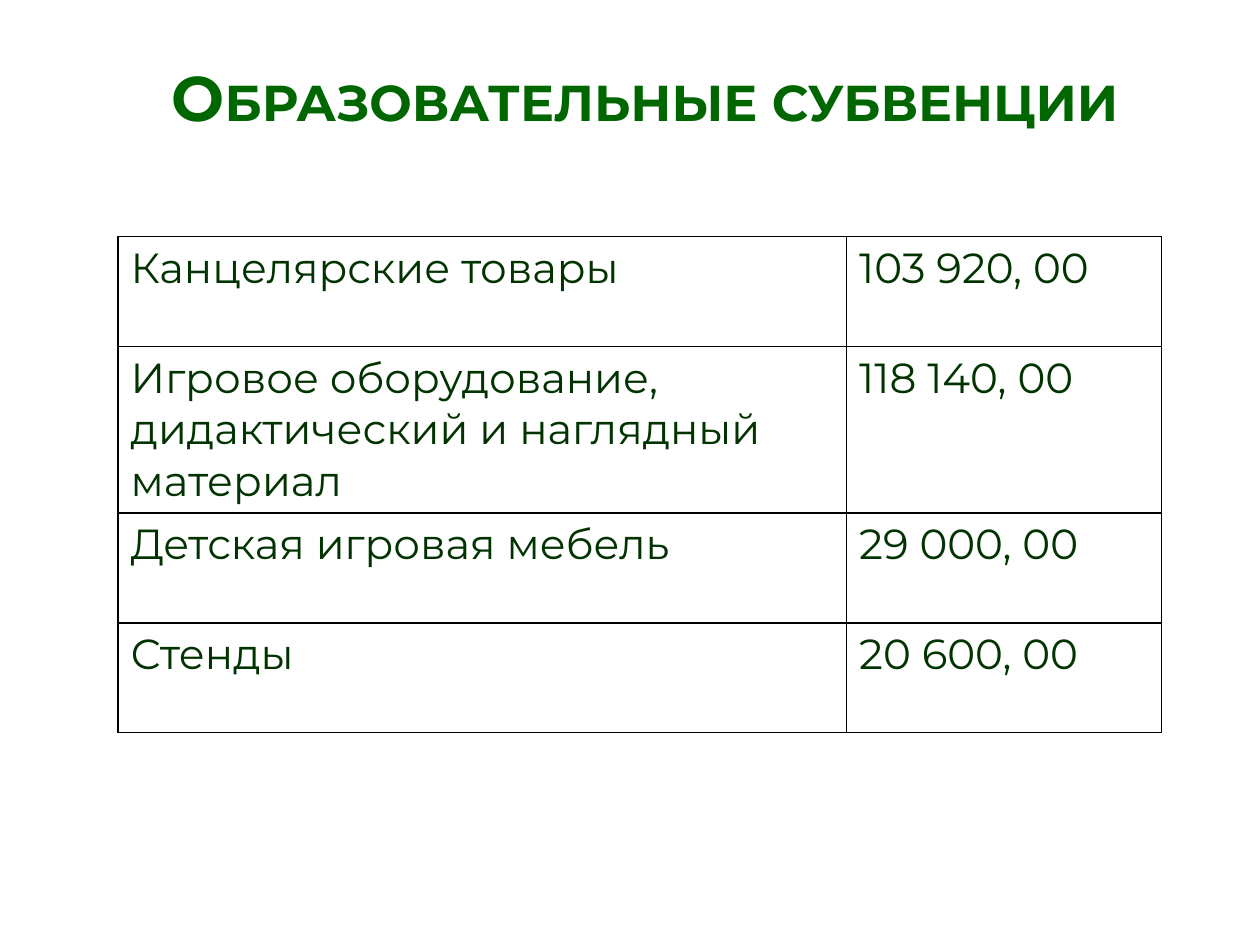
from dataclasses import dataclass

from lxml.etree import SubElement
from pptx import Presentation
from pptx.dml.color import RGBColor
from pptx.enum.text import MSO_ANCHOR as Anchor, MSO_AUTO_SIZE as AutoSize, PP_ALIGN as Align
from pptx.oxml.ns import qn
from pptx.slide import Slide
from pptx.table import _Cell as Cell
from pptx.text.text import TextFrame
from pptx.util import Pt


@dataclass(frozen=True)
class Theme:
    font: str = "Montserrat"
    title_color: str = "006600"
    text_color: str = "003300"
    border_color: str = "000000"
    title_size: float = 36
    text_size: float = 24
    border_width: float = 1


@dataclass(frozen=True)
class Expense:
    name: str
    amount: str
    height: float = 62.8


THEME = Theme()
COLUMN_WIDTHS = (416.3, 180)
EXPENSES = (
    Expense("Канцелярские товары", "103 920, 00"),
    Expense("Игровое оборудование, дидактический и наглядный материал", "118 140, 00", 93.6),
    Expense("Детская игровая мебель", "29 000, 00"),
    Expense("Стенды", "20 600, 00"),
)


def write_text(frame: TextFrame, text: str, *, size: float, color: str, bold: bool = False,
               small_caps: bool = False, align: Align = Align.LEFT) -> None:
    frame.word_wrap = True
    para = frame.paragraphs[0]
    para.alignment = align
    span = para.add_run()
    span.text = text
    span.font.name = THEME.font
    span.font.size = Pt(size)
    span.font.bold = bold
    span.font.color.rgb = RGBColor.from_string(color)
    if small_caps:
        span._r.get_or_add_rPr().set("cap", "small")


def draw_borders(cell: Cell) -> None:
    properties = cell._tc.get_or_add_tcPr()
    for side in ("a:lnL", "a:lnR", "a:lnT", "a:lnB"):
        line = SubElement(properties, qn(side), w=str(Pt(THEME.border_width)))
        fill = SubElement(line, qn("a:solidFill"))
        SubElement(fill, qn("a:srgbClr"), val=THEME.border_color)


def draw_title(page: Slide, text: str) -> None:
    title = page.shapes.title
    title.left, title.top, title.width, title.height = Pt(44.6), Pt(28), Pt(648), Pt(52)
    frame = title.text_frame
    frame.auto_size = AutoSize.NONE
    frame.vertical_anchor = Anchor.BOTTOM
    write_text(frame, text, size=THEME.title_size, color=THEME.title_color,
               bold=True, small_caps=True, align=Align.CENTER)


def draw_expenses(page: Slide, expenses: tuple[Expense, ...]) -> None:
    table = page.shapes.add_table(
        len(expenses), len(COLUMN_WIDTHS), Pt(67.5), Pt(135.2),
        Pt(sum(COLUMN_WIDTHS)), Pt(sum(expense.height for expense in expenses))).table
    table.first_row = False
    table.horz_banding = False
    for column, width in zip(table.columns, COLUMN_WIDTHS):
        column.width = Pt(width)
    for row, expense in zip(table.rows, expenses):
        row.height = Pt(expense.height)
        for cell, text in zip(row.cells, (expense.name, expense.amount)):
            draw_borders(cell)
            cell.fill.background()
            write_text(cell.text_frame, text, size=THEME.text_size, color=THEME.text_color)


def main() -> None:
    deck = Presentation()
    deck.slide_width, deck.slide_height = Pt(720), Pt(540)
    page = deck.slides.add_slide(deck.slide_layouts[5])
    draw_title(page, "Образовательные субвенции")
    draw_expenses(page, EXPENSES)
    deck.save("out.pptx")


if __name__ == "__main__":
    main()
